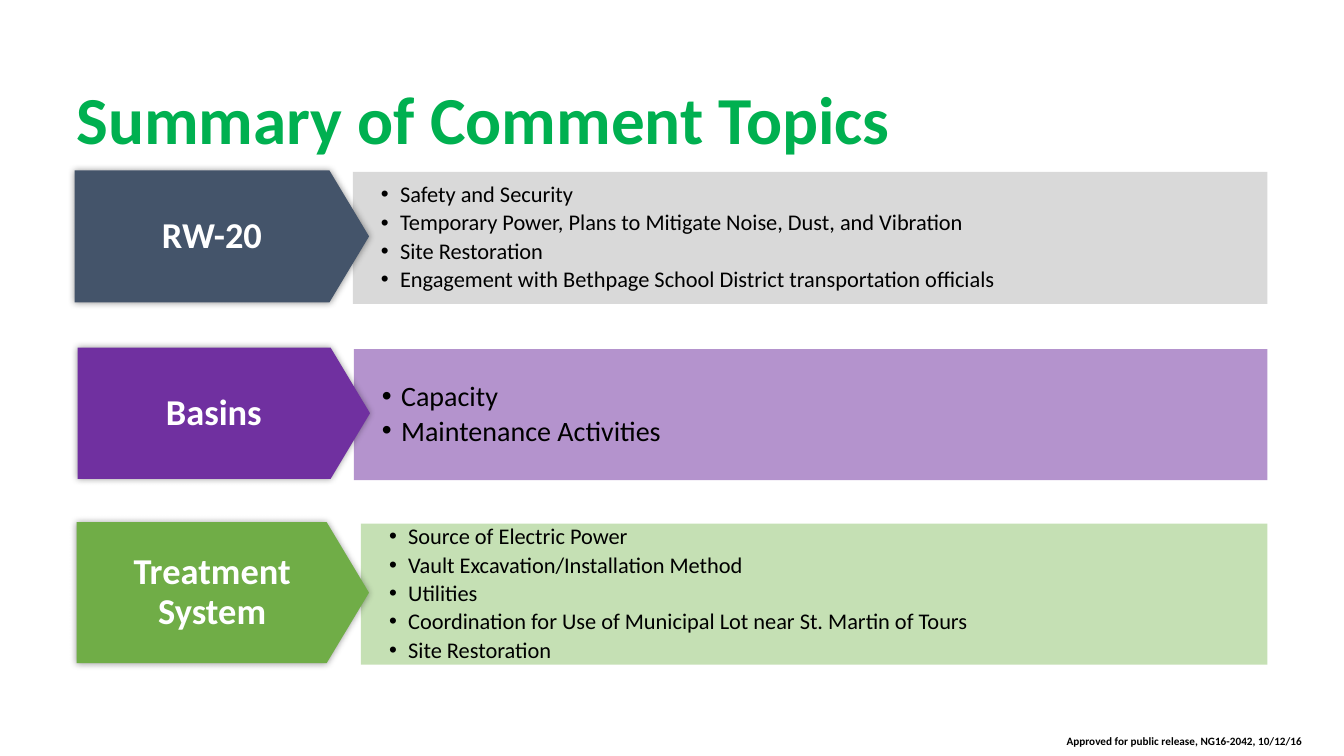
from lxml import etree
from pptx import Presentation
from pptx.dml.color import RGBColor
from pptx.enum.shapes import MSO_SHAPE
from pptx.enum.text import MSO_ANCHOR, MSO_AUTO_SIZE, PP_ALIGN
from pptx.oxml.ns import qn
from pptx.util import Inches, Pt

RECT, ARROW = MSO_SHAPE.RECTANGLE, MSO_SHAPE.PENTAGON
MIDDLE, CENTER = MSO_ANCHOR.MIDDLE, PP_ALIGN.CENTER

# Content
TITLE = "Summary of Comment Topics"
RELEASE_NOTE = "Approved for public release, NG16-2042, 10/12/16"
COLORS = {
    "title": "00B050", "text": "000000", "label": "FFFFFF",
    "slate": "44546A", "gray": "D9D9D9", "purple": "7030A0",
    "green": "70AD47", "light green": "C5E0B4",
}
TOPICS = [
    {"label": "RW-20", "color": "slate", "panel": "gray", "alpha": 100, "size": 16,
     "arrow_box": (0.74, 1.69, 2.92, 1.31), "panel_left": 3.5,
     "comments": ["Safety and Security",
                  "Temporary Power, Plans to Mitigate Noise, Dust, and Vibration",
                  "Site Restoration",
                  "Engagement with Bethpage School District transportation officials"]},
    {"label": "Basins", "color": "purple", "panel": "purple", "alpha": 52, "size": 20,
     "arrow_box": (0.77, 3.45, 2.9, 1.3), "panel_left": 3.51,
     "comments": ["Capacity", "Maintenance Activities"]},
    {"label": "Treatment System", "color": "green", "panel": "light green", "alpha": 100,
     "size": 16, "arrow_box": (0.76, 5.18, 2.9, 1.4), "panel_left": 3.58,
     "comments": ["Source of Electric Power",
                  "Vault Excavation/Installation Method",
                  "Utilities",
                  "Coordination for Use of Municipal Lot near St. Martin of Tours",
                  "Site Restoration"]},
]

# Layout, in inches
PANEL_RIGHT = 12.57
PANEL_DROP = 0.015
POINT_LENGTH = 0.3
BULLET_INDENT, BULLET_HANG = 0.37, -0.19

prs = Presentation()
prs.slide_width, prs.slide_height = Inches(13.33), Inches(7.5)
slide = prs.slides.add_slide(prs.slide_layouts[6])


def rgb(name):
    return RGBColor.from_string(COLORS[name])


def write(frame, lines, size, color, bold=False, spacing=0.9):
    frame.text = "\n".join(lines)
    for paragraph in frame.paragraphs:
        paragraph.line_spacing = spacing
        font = paragraph.runs[0].font
        font.name, font.size, font.bold = "Calibri", Pt(size), bold
        font.color.rgb = rgb(color)


def add_block(preset, box, color):
    block = slide.shapes.add_shape(preset, *map(Inches, box))
    block.shadow.inherit = False
    block.fill.solid()
    block.fill.fore_color.rgb = rgb(color)
    block.line.fill.background()
    block.text_frame.word_wrap = True
    block.text_frame.vertical_anchor = MIDDLE
    return block


def add_panel(topic):
    _, top, _, height = topic["arrow_box"]
    left = topic["panel_left"]
    panel = add_block(RECT, (left, top + PANEL_DROP, PANEL_RIGHT - left, height),
                      topic["panel"])
    if topic["alpha"] < 100:
        fill_color = panel.fill._xPr.find(".//" + qn("a:srgbClr"))
        etree.SubElement(fill_color, qn("a:alpha"), val=str(topic["alpha"] * 1000))
    write(panel.text_frame, topic["comments"], topic["size"], "text")
    for paragraph in panel.text_frame.paragraphs:
        paragraph.level = 1
        paragraph.alignment = PP_ALIGN.LEFT
        paragraph.space_after = Pt(3)
        props = paragraph._p.get_or_add_pPr()
        props.set("marL", str(Inches(BULLET_INDENT)))
        props.set("indent", str(Inches(BULLET_HANG)))
        etree.SubElement(props, qn("a:buFont"), typeface="Arial")
        etree.SubElement(props, qn("a:buChar"), char="•")


def add_label(topic):
    arrow = add_block(ARROW, topic["arrow_box"], topic["color"])
    arrow.adjustments[0] = POINT_LENGTH
    frame = arrow.text_frame
    frame.margin_left = frame.margin_right = Inches(0.2)
    write(frame, [topic["label"]], 26, "label", bold=True)
    frame.paragraphs[0].alignment = CENTER
    # Soft glow-like shadow around the arrow
    effects = arrow._element.spPr.find(qn("a:effectLst"))
    shadow = etree.SubElement(effects, qn("a:outerShdw"), blurRad=str(Pt(5)),
                              dist="0", dir="0", algn="ctr", rotWithShape="0")
    shade = etree.SubElement(shadow, qn("a:srgbClr"), val=COLORS["text"])
    etree.SubElement(shade, qn("a:alpha"), val="40000")


# Title
title = slide.shapes.add_textbox(*map(Inches, (0.41, 0.81, 11.13, 0.69))).text_frame
title.word_wrap = True
write(title, [TITLE], 48, "title", bold=True)
title.paragraphs[0]._p.get_or_add_pPr().set("marL", str(Inches(0.25)))

# Topic rows: comment panel behind, arrow label in front
for topic in TOPICS:
    add_panel(topic)
    add_label(topic)

# Release note
note = slide.shapes.add_textbox(*map(Inches, (10.48, 7.24, 2.57, 0.24))).text_frame
note.word_wrap = False
note.auto_size = MSO_AUTO_SIZE.SHAPE_TO_FIT_TEXT
write(note, [RELEASE_NOTE], 8, "text", bold=True, spacing=1.0)

prs.save("out.pptx")
